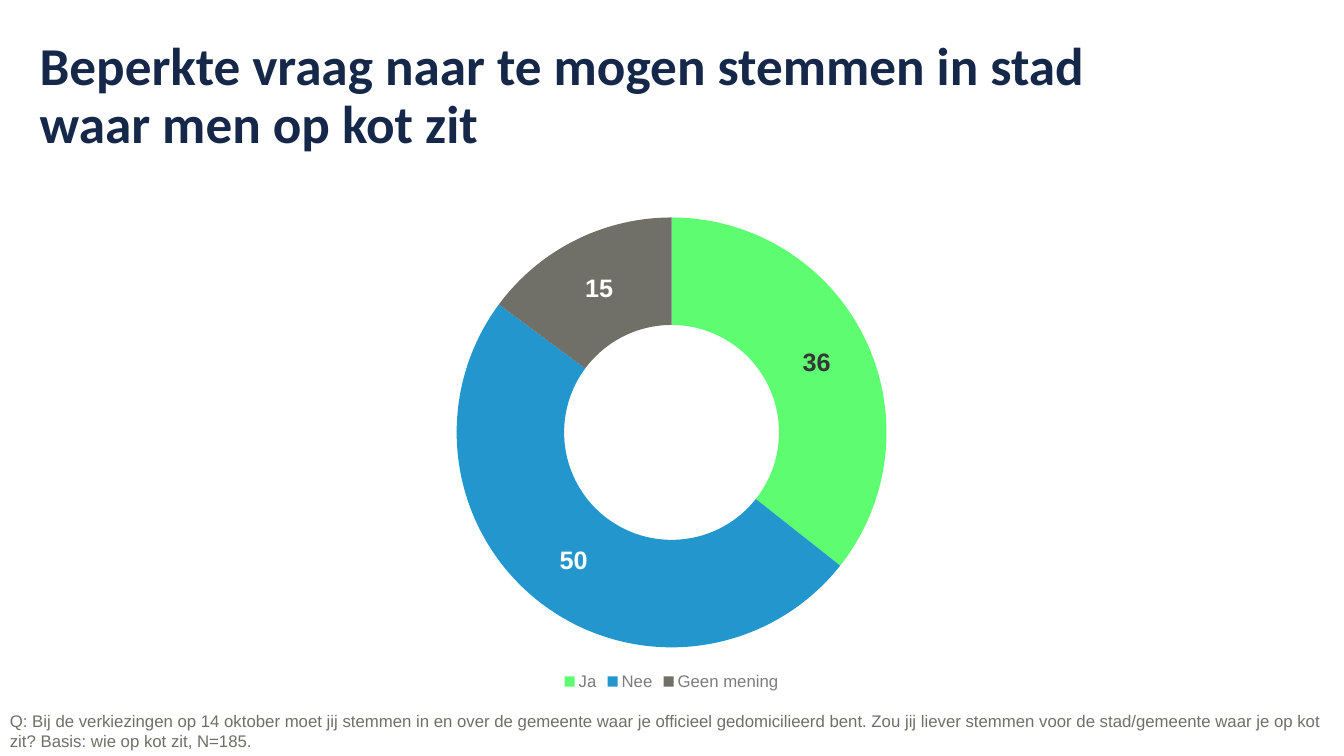
from dataclasses import dataclass

from pptx import Presentation
from pptx.chart.data import CategoryChartData
from pptx.dml.color import RGBColor
from pptx.enum.chart import XL_CHART_TYPE, XL_LEGEND_POSITION
from pptx.enum.text import MSO_ANCHOR, PP_ALIGN
from pptx.util import Cm, Pt

DOUGHNUT = XL_CHART_TYPE.DOUGHNUT
BOTTOM = XL_LEGEND_POSITION.BOTTOM
TOP = MSO_ANCHOR.TOP
LEFT = PP_ALIGN.LEFT

COLORS = {
    "navy": "16284A",
    "green": "5DFC71",
    "blue": "2396CD",
    "grey": "707068",
    "legend": "7E7C7C",
    "dark": "373636",
    "white": "FFFFFF",
}
TITLE = "Beperkte vraag naar te mogen stemmen in stad waar men op kot zit"
QUESTION = (
    "Q: Bij de verkiezingen op 14 oktober moet jij stemmen in en over de gemeente "
    "waar je officieel gedomicilieerd bent. Zou jij liever stemmen voor de "
    "stad/gemeente waar je op kot zit? Basis: wie op kot zit, N=185."
)


@dataclass
class Answer:
    name: str
    percent: int
    fill: str
    label: str = "white"


ANSWERS = [
    Answer("Ja", 36, "green", "dark"),
    Answer("Nee", 50, "blue"),
    Answer("Geen mening", 15, "grey"),
]


def rgb(name: str) -> RGBColor:
    return RGBColor.from_string(COLORS[name])


def set_font(font, size: float, color: str, bold: bool = False, name: str = "Arial") -> None:
    font.name = name
    font.size = Pt(size)
    font.bold = bold
    font.color.rgb = rgb(color)


def add_title(s) -> None:
    title = s.shapes.title
    title.left, title.top = Cm(1), Cm(1)
    title.width, title.height = Cm(29.13), Cm(2.92)
    tf = title.text_frame
    tf.margin_left = tf.margin_top = tf.margin_right = tf.margin_bottom = 0
    tf.vertical_anchor = TOP
    tf.text = TITLE
    p = tf.paragraphs[0]
    p.alignment = LEFT
    p.line_spacing = 0.9
    set_font(p.font, 38, "navy", bold=True, name="Calibri")


def add_answer_chart(s) -> None:
    data = CategoryChartData()
    data.categories = [a.name for a in ANSWERS]
    data.add_series("Series 1", [a.percent for a in ANSWERS])
    chart = s.shapes.add_chart(
        DOUGHNUT, Cm(1.57), Cm(5.13), Cm(30.71), Cm(12.37), data
    ).chart
    set_font(chart.font, 10, "dark")
    chart.has_title = False
    chart.has_legend = True
    chart.legend.position = BOTTOM
    chart.legend.include_in_layout = False
    set_font(chart.legend.font, 12, "legend")

    plot = chart.plots[0]
    plot.vary_by_categories = True
    for hole in plot._element.xpath("c:holeSize"):
        hole.set("val", "55")

    series = plot.series[0]
    series.data_labels.show_value = True
    series.data_labels.show_percentage = False
    set_font(series.data_labels.font, 18, "white", bold=True)
    for i, answer in enumerate(ANSWERS):
        point = series.points[i]
        point.format.fill.solid()
        point.format.fill.fore_color.rgb = rgb(answer.fill)
        point.format.line.fill.background()
        if answer.label != "white":
            set_font(point.data_label.font, 18, answer.label, bold=True)


def add_question(s) -> None:
    tf = s.shapes.add_textbox(0, Cm(17.78), Cm(34.09), Cm(1.27)).text_frame
    tf.word_wrap = True
    tf.text = QUESTION
    set_font(tf.paragraphs[0].font, 12, "grey")


def main() -> None:
    prs = Presentation()
    prs.slide_width, prs.slide_height = Cm(33.87), Cm(19.05)
    s = prs.slides.add_slide(prs.slide_layouts.get_by_name("Title Only"))
    add_answer_chart(s)
    add_title(s)
    add_question(s)
    prs.save("out.pptx")


if __name__ == "__main__":
    main()
